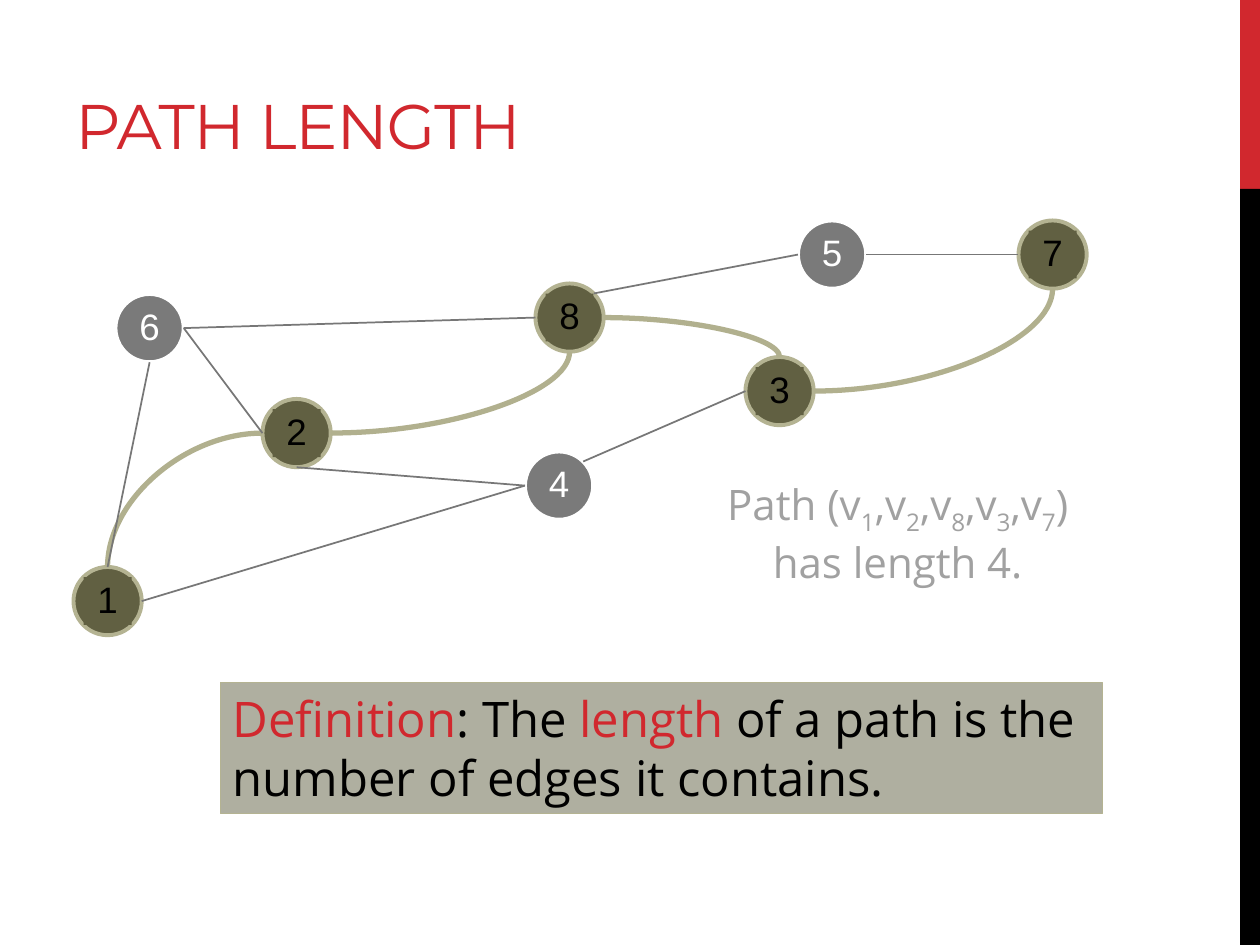
from math import cos, radians, sin

from lxml.etree import SubElement
from pptx import Presentation
from pptx.dml.color import RGBColor
from pptx.enum.shapes import MSO_CONNECTOR as LINK, MSO_SHAPE as SHAPE
from pptx.enum.text import MSO_ANCHOR as ANCHOR, MSO_AUTO_SIZE as FIT, PP_ALIGN as ALIGN
from pptx.oxml.ns import qn
from pptx.util import Inches, Pt

# Grid of 120 columns by 90 rows, twelve to the inch
COLS, ROWS = 120, 90
RED, BLACK, WHITE = "D1282E", "000000", "FFFFFF"
OLIVE, OLIVE_RIM, OLIVE_PATH = "616042", "B4B392", "B1B08E"
GRAY, EDGE_GRAY, NOTE_GRAY = "7A7A7A", "777777", "A1A1A1"

NODE, LABEL = 6.5, 4.56
# Column and row of each node within the graph
NODES = {1: (0, 33), 2: (18, 17), 8: (44, 6), 3: (64, 13), 7: (90, 0),
         4: (43, 22), 5: (69, 0), 6: (4, 7)}
PATH_NODES = (1, 2, 8, 3, 7)
# Connection sites of an ellipse, counterclockwise from the top
TOP, LEFT, BOTTOM, RIGHT, TOP_RIGHT = 0, 2, 4, 6, 7
PATH_EDGES = [(2, LEFT, 1, TOP), (2, RIGHT, 8, BOTTOM),
              (8, RIGHT, 3, TOP), (3, RIGHT, 7, BOTTOM)]
OTHER_EDGES = [(6, RIGHT, 2, LEFT), (6, BOTTOM, 1, TOP),
               (4, LEFT, 2, BOTTOM), (4, TOP_RIGHT, 3, LEFT),
               (8, TOP_RIGHT, 5, LEFT), (5, RIGHT, 7, LEFT),
               (6, RIGHT, 8, LEFT), (1, RIGHT, 4, LEFT)]


def grid(*units):
    return [Inches(unit / 12) for unit in units]


def color(hex_string):
    return RGBColor.from_string(hex_string)


def add_block(shapes, kind, box, fill, rim=None, rim_width=0):
    block = shapes.add_shape(kind, *grid(*box))
    block.shadow.inherit = False
    block.fill.solid()
    block.fill.fore_color.rgb = color(fill)
    if rim:
        block.line.color.rgb = color(rim)
        block.line.width = Pt(rim_width)
    else:
        block.line.fill.background()
    return block


def set_frame(frame, **format_values):
    for name, value in {"word_wrap": True, **format_values}.items():
        setattr(frame, name, value)


def add_run(paragraph, text, font, size, tint):
    run = paragraph.add_run()
    run.text = text
    for name, value in {"name": font, "size": Pt(size)}.items():
        setattr(run.font, name, value)
    run.font.color.rgb = color(tint)
    return run


def side_bar(slide, box):
    left, top, width, height = box
    accent = height / 5
    add_block(slide.shapes, SHAPE.RECTANGLE, (left, top, width, accent), RED)
    add_block(slide.shapes, SHAPE.RECTANGLE,
              (left, top + accent, width, height - accent), BLACK)


def title(slide, box):
    frame = slide.shapes.add_textbox(*grid(*box)).text_frame
    set_frame(frame, vertical_anchor=ANCHOR.BOTTOM)
    heading = add_run(frame.paragraphs[0], "PATH LENGTH", "Montserrat", 36, RED)
    heading.font._element.set("spc", "-60")


def node(slide, number, left, top):
    on_path = number in PATH_NODES
    fill, rim, ink = (OLIVE, OLIVE_RIM, BLACK) if on_path else (GRAY, WHITE, WHITE)
    group = slide.shapes.add_group_shape().shapes
    disc = add_block(group, SHAPE.OVAL, (left, top, NODE, NODE), fill, rim, 2.25)
    inset = (NODE - LABEL) / 2
    label_box = (left + inset, top + inset, LABEL, LABEL)
    if on_path:
        label = add_block(group, SHAPE.RECTANGLE, label_box, fill)
    else:
        label = group.add_textbox(*grid(*label_box))
    margins = {f"margin_{side}": Inches(0.03)
               for side in ("left", "top", "right", "bottom")}
    set_frame(label.text_frame, vertical_anchor=ANCHOR.MIDDLE, **margins)
    line = label.text_frame.paragraphs[0]
    line.alignment, line.line_spacing = ALIGN.CENTER, 0.9
    add_run(line, str(number), "Arial", 21, ink)
    return disc


def site_point(disc, site):
    angle = radians(90 + 45 * site)
    radius = disc.width / 2
    return (round(disc.left + radius * (1 + cos(angle))),
            round(disc.top + radius * (1 - sin(angle))))


def edge(slide, start, start_site, end, end_site, on_path):
    link = slide.shapes.add_connector(
        LINK.CURVE if on_path else LINK.STRAIGHT,
        *site_point(start, start_site), *site_point(end, end_site))
    link.line.color.rgb = color(OLIVE_PATH if on_path else EDGE_GRAY)
    link.line.width = Pt(3 if on_path else 1)
    properties = link._element.spPr
    SubElement(properties, qn("a:effectLst"))
    if on_path:  # a single bend: leaves sideways, arrives upright
        properties.find(qn("a:prstGeom")).set("prst", "curvedConnector2")
    # Attach both ends to their nodes
    glue = link._element.find(".//" + qn("p:cNvCxnSpPr"))
    for tag, disc, site in (("a:stCxn", start, start_site), ("a:endCxn", end, end_site)):
        SubElement(glue, qn(tag), id=str(disc.shape_id), idx=str(site))


def graph(slide, box):
    left, top = box[:2]
    discs = {number: node(slide, number, left + col, top + row)
             for number, (col, row) in NODES.items()}
    for edges, on_path in ((PATH_EDGES, True), (OTHER_EDGES, False)):
        for start, start_site, end, end_site in edges:
            edge(slide, discs[start], start_site, discs[end], end_site, on_path)


def definition(slide, box):
    panel = add_block(slide.shapes, SHAPE.RECTANGLE, box, OLIVE, OLIVE_RIM, 0.75)
    tint = panel._element.spPr.find(qn("a:solidFill"))[0]
    SubElement(tint, qn("a:alpha"), val="50000")
    set_frame(panel.text_frame, vertical_anchor=ANCHOR.TOP,
              auto_size=FIT.SHAPE_TO_FIT_TEXT)
    sentence = panel.text_frame.paragraphs[0]
    sentence.alignment = ALIGN.LEFT
    for text, ink in (("Definition", RED), (": The ", BLACK), ("length", RED),
                      (" of a path is the number of edges it contains.", BLACK)):
        add_run(sentence, text, "Open Sans", 28, ink)


def path_note(slide, box):
    frame = slide.shapes.add_textbox(*grid(*box)).text_frame
    set_frame(frame, auto_size=FIT.SHAPE_TO_FIT_TEXT)
    vertices, length = frame.paragraphs[0], frame.add_paragraph()
    vertices.alignment = length.alignment = ALIGN.CENTER
    style = ("Open Sans", 24, NOTE_GRAY)
    for position, number in enumerate(PATH_NODES):
        add_run(vertices, ",v" if position else "Path (v", *style)
        subscript = add_run(vertices, str(number), *style)
        subscript.font._element.set("baseline", "-25000")
    add_run(vertices, ")", *style)
    add_run(length, f"has length {len(PATH_EDGES)}.", *style)


def main():
    deck = Presentation()
    deck.slide_width, deck.slide_height = grid(COLS, ROWS)
    slide = deck.slides.add_slide(deck.slide_layouts[6])
    side_bar(slide, (118.1, 0, 1.9, ROWS))
    title(slide, (6, 2, 76, 14))
    graph(slide, (7, 21, 96.5, 39.5))
    definition(slide, (21, 65, 84, 12.5))
    path_note(slide, (66, 45, 39, 10.9))
    deck.save("out.pptx")


if __name__ == "__main__":
    main()
